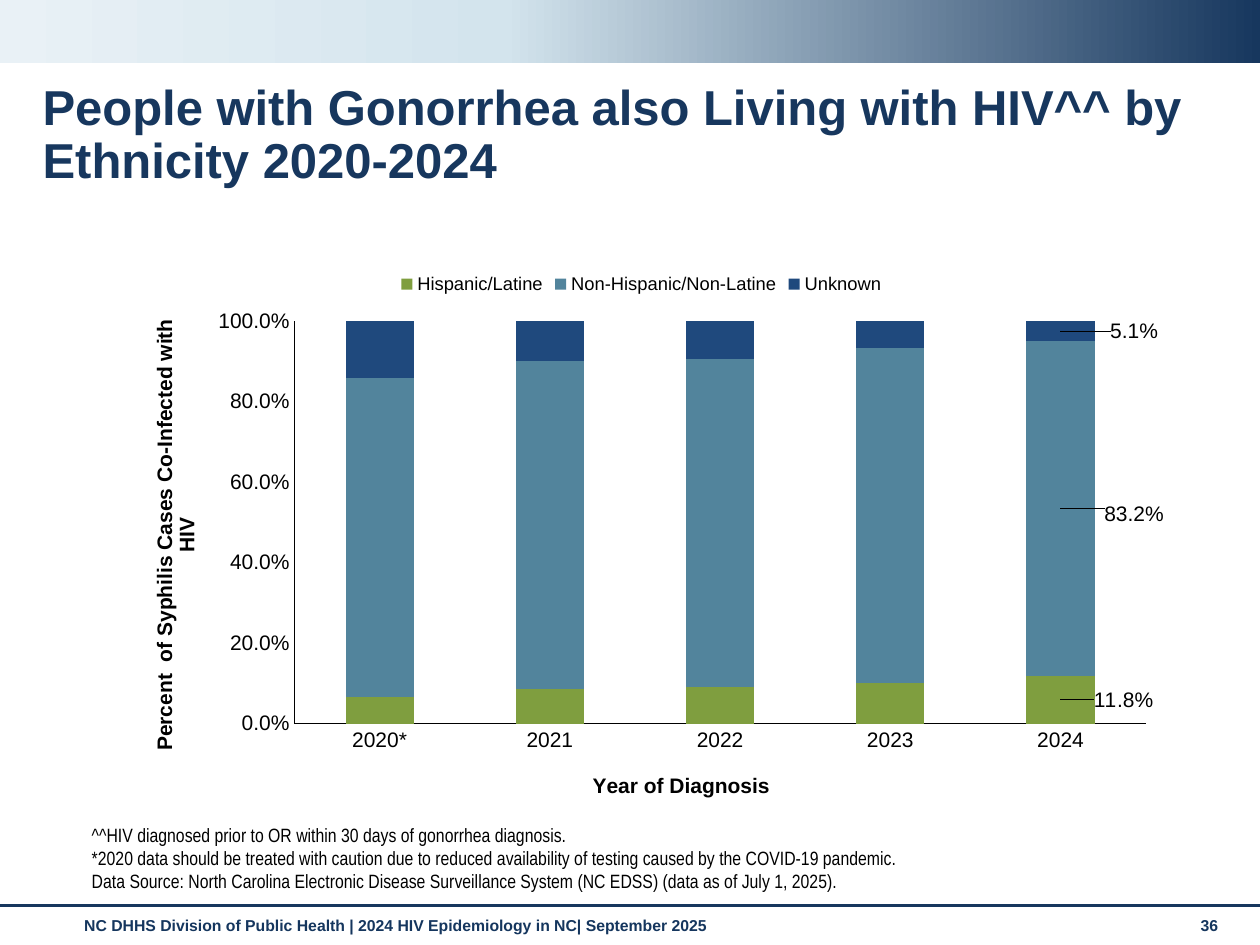
from copy import deepcopy

from lxml import etree
from pptx import Presentation
from pptx.chart.data import CategoryChartData
from pptx.dml.color import RGBColor
from pptx.enum.chart import XL_CHART_TYPE, XL_LABEL_POSITION, XL_LEGEND_POSITION, XL_TICK_MARK
from pptx.enum.shapes import MSO_CONNECTOR, MSO_SHAPE
from pptx.enum.text import MSO_ANCHOR
from pptx.oxml.ns import qn
from pptx.util import Inches, Pt

NAVY = RGBColor(0x17, 0x37, 0x5E)
FOOTER_NAVY = RGBColor(0x15, 0x36, 0x5E)
SKY = RGBColor(0xD3, 0xE4, 0xED)
MIST = RGBColor(0xE9, 0xF1, 0xF6)
BLACK = RGBColor(0, 0, 0)
GREEN = RGBColor(0x7F, 0x9E, 0x3F)
TEAL = RGBColor(0x52, 0x84, 0x9C)
BLUE = RGBColor(0x1F, 0x49, 0x7D)

STACKED = XL_CHART_TYPE.COLUMN_STACKED
LABEL_CENTER = XL_LABEL_POSITION.CENTER
LEGEND_TOP = XL_LEGEND_POSITION.TOP
NO_TICK = XL_TICK_MARK.NONE
STRAIGHT = MSO_CONNECTOR.STRAIGHT
RECTANGLE = MSO_SHAPE.RECTANGLE
TOP, BOTTOM = MSO_ANCHOR.TOP, MSO_ANCHOR.BOTTOM

PERCENT = "0.0%"
YEARS = ["2020*", "2021", "2022", "2023", "2024"]
ETHNICITIES = [
    ("Hispanic/Latine", GREEN, (0.067, 0.086, 0.091, 0.102, 0.118), (0.06, 0)),
    ("Non-Hispanic/Non-Latine", TEAL, (0.791, 0.814, 0.814, 0.83, 0.832), (0.07, 0.01)),
    ("Unknown", BLUE, (0.141, 0.1, 0.095, 0.068, 0.051), (0.07, 0)),
]
FOOTNOTES = [
    "^^HIV diagnosed prior to OR within 30 days of gonorrhea diagnosis.",
    "*2020 data should be treated with caution due to reduced availability of testing "
    "caused by the COVID-19 pandemic.",
    "Data Source: North Carolina Electronic Disease Surveillance System (NC EDSS) "
    "(data as of July 1, 2025).",
]


def manual_layout(**settings):
    """Return a c:layout element holding the given manual layout settings."""
    layout = etree.Element(qn("c:layout"))
    manual = etree.SubElement(layout, qn("c:manualLayout"))
    for name, value in settings.items():
        etree.SubElement(manual, qn(f"c:{name}")).set("val", str(value))
    return layout


def replace_layout(parent, predecessor, layout):
    """Place a layout after the predecessor, dropping any earlier one."""
    for earlier in parent.findall(qn("c:layout")):
        parent.remove(earlier)
    if predecessor is None:
        parent.insert(0, layout)
    else:
        predecessor.addnext(layout)


class SlideBuilder:
    """Hold the text style and the current slide."""

    def __init__(self, slide, font_name="Arial"):
        self.slide = slide
        self.font_name = font_name

    def style(self, font, size, color=BLACK, bold=False, name=None):
        """Apply the house style to a font."""
        font.name = name or self.font_name
        font.size = Pt(size)
        font.bold = bold
        font.color.rgb = color

    def text(self, box, lines, size, color, bold=False, name=None, anchor=TOP, spacing=1.0):
        """Add a wrapped text box with one paragraph per line."""
        frame = self.slide.shapes.add_textbox(*map(Inches, box)).text_frame
        frame.word_wrap = True
        frame.vertical_anchor = anchor
        frame.text = "\n".join(lines)
        for paragraph in frame.paragraphs:
            paragraph.line_spacing = spacing
            self.style(paragraph.font, size, color, bold, name)

    def gradient_band(self, box, stops, angle):
        """Add a rectangle filled with a linear gradient."""
        band = self.slide.shapes.add_shape(RECTANGLE, *map(Inches, box))
        band.shadow.inherit = False
        band.line.fill.background()
        band.fill.gradient()
        band.fill.gradient_angle = angle
        stop_list = band._element.spPr.find(".//" + qn("a:gsLst"))
        while len(stop_list) < len(stops):
            stop_list.append(deepcopy(stop_list[-1]))
        for stop, (position, color) in zip(band.fill.gradient_stops, stops):
            stop.position = position
            stop.color.rgb = color

    def rule(self, y, width, color, weight):
        """Add a horizontal line from the left edge."""
        rule = self.slide.shapes.add_connector(STRAIGHT, 0, Inches(y), Inches(width), Inches(y))
        rule.line.color.rgb = color
        rule.line.width = Pt(weight)
        etree.SubElement(rule._element.spPr, qn("a:effectLst"))

    def axis(self, axis, title, x, y):
        """Style an axis and place its title."""
        axis.has_major_gridlines = False
        axis.major_tick_mark = axis.minor_tick_mark = NO_TICK
        axis.format.line.color.rgb = BLACK
        axis.format.line.width = Pt(0.75)
        self.style(axis.tick_labels.font, 12)
        heading = axis.axis_title
        heading.text_frame.text = title
        self.style(heading.text_frame.paragraphs[0].font, 12, bold=True)
        element = heading._element
        replace_layout(element, element.find(qn("c:tx")),
                       manual_layout(xMode="edge", yMode="edge", x=x, y=y))

    def last_label(self, series, index, offset):
        """Label one point, moved from its centre by the offset."""
        series.data_labels.show_value = False
        series.data_labels.number_format = PERCENT
        series.data_labels.number_format_is_linked = False
        label = series.points[index].data_label
        self.style(label.font, 12)
        label.position = LABEL_CENTER
        element = series._element.find(".//" + qn("c:dLbl"))
        replace_layout(element, element.find(qn("c:idx")),
                       manual_layout(x=offset[0], y=offset[1]))

    def stacked_chart(self, box):
        """Add the stacked column chart of ethnicity by year."""
        data = CategoryChartData(number_format=PERCENT)
        data.categories = YEARS
        for name, _, shares, _ in ETHNICITIES:
            data.add_series(name, shares)
        chart = self.slide.shapes.add_chart(STACKED, *map(Inches, box), data).chart
        self.style(chart.font, 10)
        chart.has_title = False
        chart.has_legend = True
        chart.legend.position = LEGEND_TOP
        chart.legend.include_in_layout = False
        self.style(chart.legend.font, 10.5)

        plot = chart.plots[0]
        plot.gap_width = 150
        plot.overlap = 100
        plot.vary_by_categories = False
        for series, (_, color, _, offset) in zip(plot.series, ETHNICITIES):
            series.format.fill.solid()
            series.format.fill.fore_color.rgb = color
            self.last_label(series, len(YEARS) - 1, offset)

        self.axis(chart.category_axis, "Year of Diagnosis", 0.45, 0.91)
        shares_axis = chart.value_axis
        self.axis(shares_axis, "Percent  of Syphilis Cases Co-Infected with HIV", 0.03, 0.1)
        shares_axis.minimum_scale = 0
        shares_axis.maximum_scale = 1
        shares_axis.major_unit = 0.2
        shares_axis.tick_labels.number_format = PERCENT
        shares_axis.tick_labels.number_format_is_linked = False
        plot_area = chart._chartSpace.find(".//" + qn("c:plotArea"))
        replace_layout(plot_area, None, manual_layout(
            layoutTarget="inner", xMode="edge", yMode="edge", x=0.17, y=0.11, w=0.81, h=0.72))


def main():
    """Build the slide and save it."""
    presentation = Presentation()
    presentation.slide_width = Inches(10)
    presentation.slide_height = Inches(7.5)
    builder = SlideBuilder(presentation.slides.add_slide(presentation.slide_layouts[6]))

    builder.gradient_band((0, 0, 10, 0.5), [(0, NAVY), (0.6, SKY), (1, MIST)], 180)
    builder.rule(7.19, 10, NAVY, 1.75)
    builder.text((0.57, 7.22, 8.74, 0.29),
                 ["NC DHHS Division of Public Health | 2024 HIV Epidemiology in NC| September 2025"],
                 9, FOOTER_NAVY, bold=True)
    builder.text((9.43, 7.22, 0.44, 0.3), ["36"], 9, FOOTER_NAVY, bold=True)
    builder.text((0.24, 0.61, 9.7, 0.6),
                 ["People with Gonorrhea also Living with HIV^^ by Ethnicity 2020-2024"],
                 28, NAVY, bold=True, spacing=0.9)
    builder.text((0.63, 6.5, 8.74, 0.63), FOOTNOTES, 11, BLACK,
                 name="Arial Narrow", anchor=BOTTOM)
    builder.stacked_chart((0.92, 2.06, 8.34, 4.44))
    presentation.save("out.pptx")


if __name__ == "__main__":
    main()
